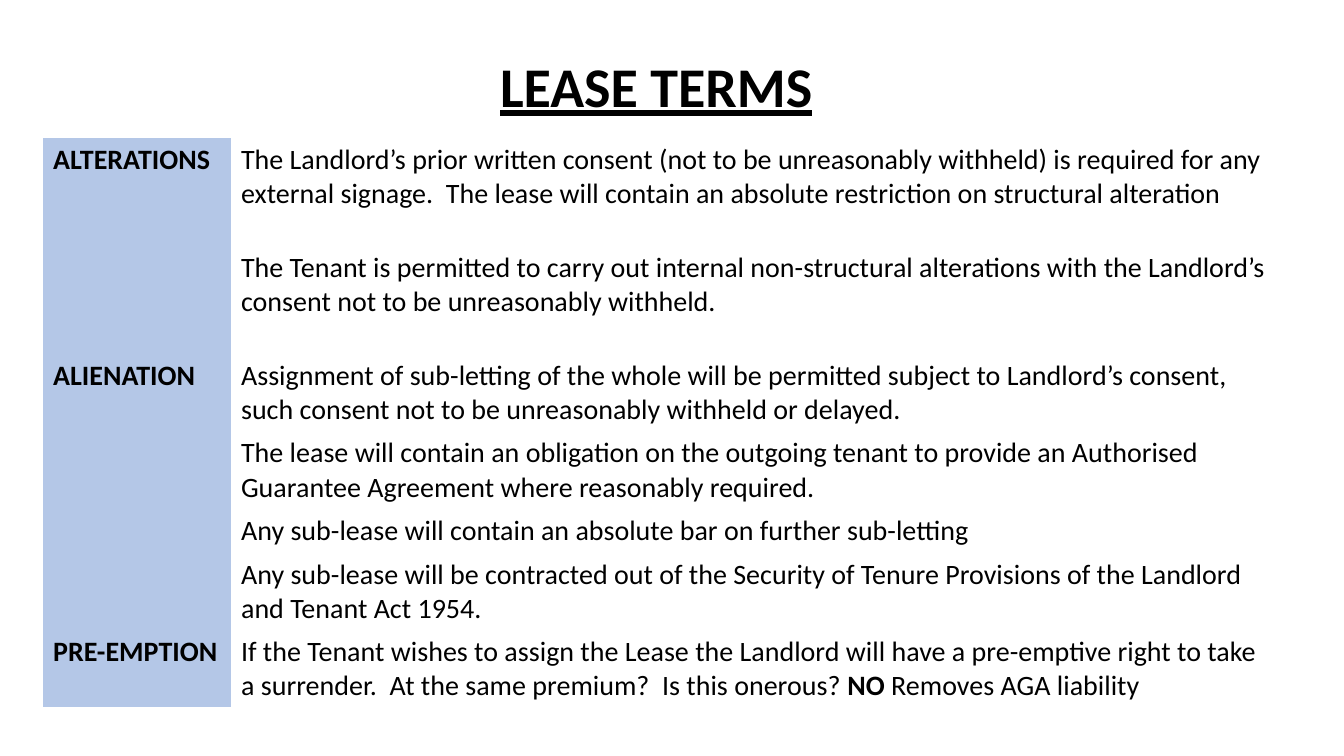
from dataclasses import dataclass

from pptx import Presentation
from pptx.dml.color import RGBColor
from pptx.enum.text import MSO_ANCHOR, PP_ALIGN
from pptx.oxml.ns import qn
from pptx.util import Emu, Pt

CENTER, LEFT = PP_ALIGN.CENTER, PP_ALIGN.LEFT
MIDDLE = MSO_ANCHOR.MIDDLE
EMU_PER_PX = 9525
NO_STYLE_NO_GRID = "{2D5ABB26-0587-4C30-8999-92F81FD0307C}"


@dataclass(frozen=True)
class Theme:
    font: str = "Calibri"
    text: RGBColor = RGBColor(0, 0, 0)
    label_fill: RGBColor = RGBColor(0xB4, 0xC7, 0xE7)
    title_size: int = 40
    body_size: int = 20


THEME = Theme()
COLUMN_WIDTHS = (179, 995)

# Row height, label, and the term as (text, bold) runs.
TERMS = [
    (103, "ALTERATIONS", [("The Landlord’s prior written consent (not to be unreasonably withheld) is required "
                           "for any external signage.  The lease will contain an absolute restriction on "
                           "structural alteration", False)]),
    (103, "", [("The Tenant is permitted to carry out internal non-structural alterations with the "
                "Landlord’s consent not to be unreasonably withheld.", False)]),
    (72, "ALIENATION", [("Assignment of sub-letting of the whole will be permitted subject to Landlord’s "
                         "consent, such consent not to be unreasonably withheld or delayed.", False)]),
    (72, "", [("The lease will contain an obligation on the outgoing tenant to provide an Authorised "
               "Guarantee Agreement where reasonably required.", False)]),
    (42, "", [("Any sub-lease will contain an absolute bar on further sub-letting", False)]),
    (72, "", [("Any sub-lease will be contracted out of the Security of Tenure Provisions of the "
               "Landlord and Tenant Act 1954.", False)]),
    (72, "PRE-EMPTION", [("If the Tenant wishes to assign the Lease the Landlord will have a pre-emptive "
                          "right to take a surrender.  At the same premium?  Is this onerous? ", False),
                         ("NO", True),
                         (" Removes AGA liability", False)]),
]


def px(n):
    return Emu(n * EMU_PER_PX)


def add_text(p, text, size=THEME.body_size, bold=False, underline=False, align=LEFT):
    p.alignment = align
    r = p.add_run()
    r.text = text
    r.font.name = THEME.font
    r.font.size = Pt(size)
    r.font.bold = bold
    r.font.underline = underline
    r.font.color.rgb = THEME.text


def add_title(s, text, left, top, width, height):
    tf = s.shapes.add_textbox(px(left), px(top), px(width), px(height)).text_frame
    tf.word_wrap = True
    tf.vertical_anchor = MIDDLE
    p = tf.paragraphs[0]
    p.line_spacing = 0.9
    add_text(p, text, size=THEME.title_size, bold=True, underline=True, align=CENTER)


def add_terms_table(s, terms, left, top):
    width, height = sum(COLUMN_WIDTHS), sum(term[0] for term in terms)
    frame = s.shapes.add_table(len(terms), len(COLUMN_WIDTHS), px(left), px(top), px(width), px(height))
    table = frame.table
    table.first_row = table.horz_banding = False
    next(frame.element.iter(qn("a:tableStyleId"))).text = NO_STYLE_NO_GRID
    for column, column_width in zip(table.columns, COLUMN_WIDTHS):
        column.width = px(column_width)
    for row, (row_height, label, runs) in zip(table.rows, terms):
        row.height = px(row_height)
        label_cell, term_cell = row.cells
        label_cell.fill.solid()
        label_cell.fill.fore_color.rgb = THEME.label_fill
        term_cell.fill.background()
        if label:
            add_text(label_cell.text_frame.paragraphs[0], label, bold=True)
        for text, bold in runs:
            add_text(term_cell.text_frame.paragraphs[0], text, bold=bold)


def main():
    prs = Presentation()
    prs.slide_width, prs.slide_height = px(1280), px(720)
    s = prs.slides.add_slide(prs.slide_layouts[6])
    add_title(s, "LEASE TERMS", 267, 40, 716, 90)
    add_terms_table(s, TERMS, 41, 131)
    prs.save("out.pptx")


if __name__ == "__main__":
    main()
